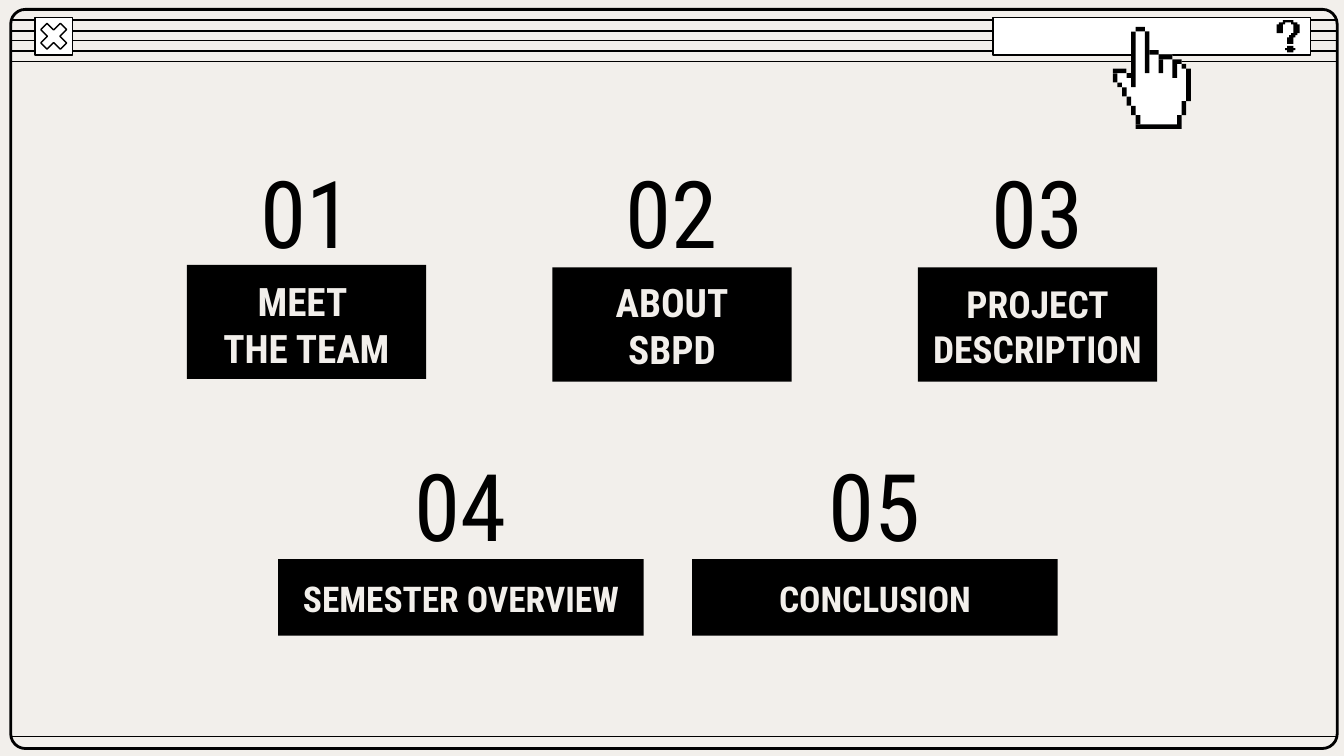
from pptx import Presentation
from pptx.dml.color import RGBColor
from pptx.enum.shapes import MSO_CONNECTOR, MSO_SHAPE
from pptx.enum.text import MSO_ANCHOR, PP_ALIGN
from pptx.oxml.ns import qn
from pptx.util import Inches, Pt
from lxml.etree import SubElement

# Content: number, lines of the label, label size, box top, label top
TOP_ROW = [
    ("01", ["MEET ", "THE TEAM"], 21, 1.97, 2.01),
    ("02", ["ABOUT", "SBPD"], 21, 1.99, 2.02),
    ("03", ["PROJECT", "DESCRIPTION"], 20, 1.99, 2.01),
]
LOW_ROW = [
    ("04", ["SEMESTER OVERVIEW"], 19, 4.16, 4.23),
    ("05", ["CONCLUSION"], 19, 4.16, 4.23),
]
# Row layout: first centre, step, box size, label size, number top and size
TOP_GRID = dict(first=2.28, step=2.72, box=(1.78, 0.85), label=(2.72, 0.85),
                num=(1.17, 1.6, 0.8))
LOW_GRID = dict(first=3.43, step=3.08, box=(2.72, 0.57), label=(2.72, 0.48),
                num=(3.51, 1.29, 0.48))

# Pixel art, in cells of its own grid
HOOK = [(3, 0), (3, 1), (1, 1), (1, 2), (0, 2), (0, 6), (3, 6), (3, 2), (4, 2),
        (4, 1), (7, 1), (7, 2), (8, 2), (8, 6), (7, 6), (7, 7), (6, 7), (6, 8),
        (5, 8), (5, 11), (8, 11), (8, 8), (9, 8), (9, 7), (10, 7), (10, 6),
        (11, 6), (11, 2), (10, 2), (10, 1), (8, 1), (8, 0)]
DOT = [(5, 12), (5, 13), (4, 13), (4, 14), (5, 14), (5, 15), (8, 15), (8, 14),
       (9, 14), (9, 13), (8, 13), (8, 12)]
HAND = [(5, 0), (5, 1), (4, 1), (4, 10), (3, 10), (3, 9), (0, 9), (0, 12),
        (1, 12), (1, 13), (2, 13), (2, 15), (3, 15), (3, 17), (4, 17), (4, 19),
        (5, 19), (5, 22), (15, 22), (15, 19), (16, 19), (16, 16), (17, 16),
        (17, 9), (16, 9), (16, 8), (15, 8), (15, 7), (13, 7), (13, 6), (10, 6),
        (10, 5), (8, 5), (8, 1), (7, 1), (7, 0)]
# Dark edges of the hand: column, row, width, height
EDGES = [(4, 1, 1, 12), (5, 0, 2, 1), (7, 1, 1, 9), (8, 5, 2, 1), (10, 7, 1, 3),
         (10, 6, 3, 1), (13, 8, 1, 3), (13, 7, 2, 1), (15, 8, 1, 1),
         (16, 9, 1, 7), (15, 16, 1, 3), (14, 19, 1, 3), (5, 21, 9, 1),
         (3, 10, 1, 1), (0, 9, 3, 1), (0, 10, 1, 2), (1, 12, 1, 1),
         (2, 13, 1, 2), (3, 15, 1, 2), (4, 17, 1, 2), (5, 19, 1, 2)]

FONT = "Roboto Condensed"
BLACK = RGBColor(0x00, 0x00, 0x00)
WHITE = RGBColor(0xFF, 0xFF, 0xFF)
CREAM = RGBColor(0xF2, 0xEF, 0xEB)

# Wide 16:9 slide
deck = Presentation()
deck.slide_width = Inches(10)
deck.slide_height = Inches(10 * 9 / 16)
slide = deck.slides.add_slide(deck.slide_layouts[6])
slide.background.fill.solid()
slide.background.fill.fore_color.rgb = CREAM
shapes = slide.shapes


def paint(shape, fill=None, line=None):
    shape.shadow.inherit = False
    if fill is None:
        shape.fill.background()
    else:
        shape.fill.solid()
        shape.fill.fore_color.rgb = fill
    if line is None:
        shape.line.fill.background()
    else:
        shape.line.color.rgb = BLACK
        shape.line.width = Pt(line)
    return shape


def add_box(host, kind, area, **look):
    return paint(host.add_shape(kind, *map(Inches, area)), **look)


def add_rule(y):
    rule = shapes.add_connector(MSO_CONNECTOR.STRAIGHT, Inches(0.08), Inches(y),
                                Inches(9.95), Inches(y))
    rule.line.color.rgb = BLACK
    rule.line.width = Pt(0.75)
    SubElement(rule.element.spPr, qn("a:effectLst"))


def add_art(host, cells, left, top, unit, fill):
    pen = host.build_freeform(*cells[0], scale=tuple(map(Inches, unit)))
    pen.add_line_segments(cells[1:], close=True)
    return paint(pen.convert_to_shape(Inches(left), Inches(top)), fill=fill)


def add_text(lines, area, size, color=BLACK, bold=False, anchor=MSO_ANCHOR.MIDDLE):
    frame = shapes.add_textbox(*map(Inches, area)).text_frame
    frame.word_wrap = True
    frame.vertical_anchor = anchor
    frame.margin_left = frame.margin_right = Inches(0.1)
    frame.margin_top = frame.margin_bottom = Inches(0.1)
    frame.text = "\n".join(lines)
    for para in frame.paragraphs:
        para.alignment = PP_ALIGN.CENTER
        font = para.runs[0].font
        font.name, font.size, font.bold = FONT, Pt(size), bold
        font.color.rgb = color


def add_row(items, first, step, box, label, num):
    for i, (mark, lines, size, box_top, text_top) in enumerate(items):
        mid = first + i * step

        def area(top, wide, high):
            return mid - wide / 2, top, wide, high

        add_box(shapes, MSO_SHAPE.RECTANGLE, area(box_top, *box), fill=BLACK)
        add_text(lines, area(text_top, *label), size, color=CREAM, bold=True,
                 anchor=MSO_ANCHOR.BOTTOM)
        add_text([mark], area(*num), 50)


# Window frame and title bar
for y in (0.15, 0.23, 0.3, 0.38, 0.46):
    add_rule(y)
frame = add_box(shapes, MSO_SHAPE.ROUNDED_RECTANGLE, (0.08, 0.07, 9.87, 5.5), line=1.5)
frame.adjustments[0] = 0.02
add_rule(5.48)

# Close button
close = (0.26, 0.13, 0.28, 0.28)
add_box(shapes, MSO_SHAPE.RECTANGLE, close, fill=WHITE, line=0.75)
add_box(shapes, MSO_SHAPE.MATH_MULTIPLY, close, fill=WHITE, line=0.75)

# Help bar with question mark
add_box(shapes, MSO_SHAPE.RECTANGLE, (7.39, 0.13, 2.36, 0.28), fill=WHITE, line=0.75)
for part in (DOT, HOOK):
    add_art(shapes, part, 9.5, 0.15, (0.17 / 11, 0.24 / 15), BLACK)

# Pointing hand
left, top = 8.28, 0.2
dx, dy = 0.58 / 17, 0.76 / 22
hand = shapes.add_group_shape().shapes
add_art(hand, HAND, left, top, (dx, dy), WHITE)
for col, row, wide, high in EDGES:
    add_box(hand, MSO_SHAPE.RECTANGLE,
            (left + col * dx, top + row * dy, wide * dx, high * dy), fill=BLACK)

# Numbered sections
add_row(TOP_ROW, **TOP_GRID)
add_row(LOW_ROW, **LOW_GRID)

deck.save("out.pptx")
